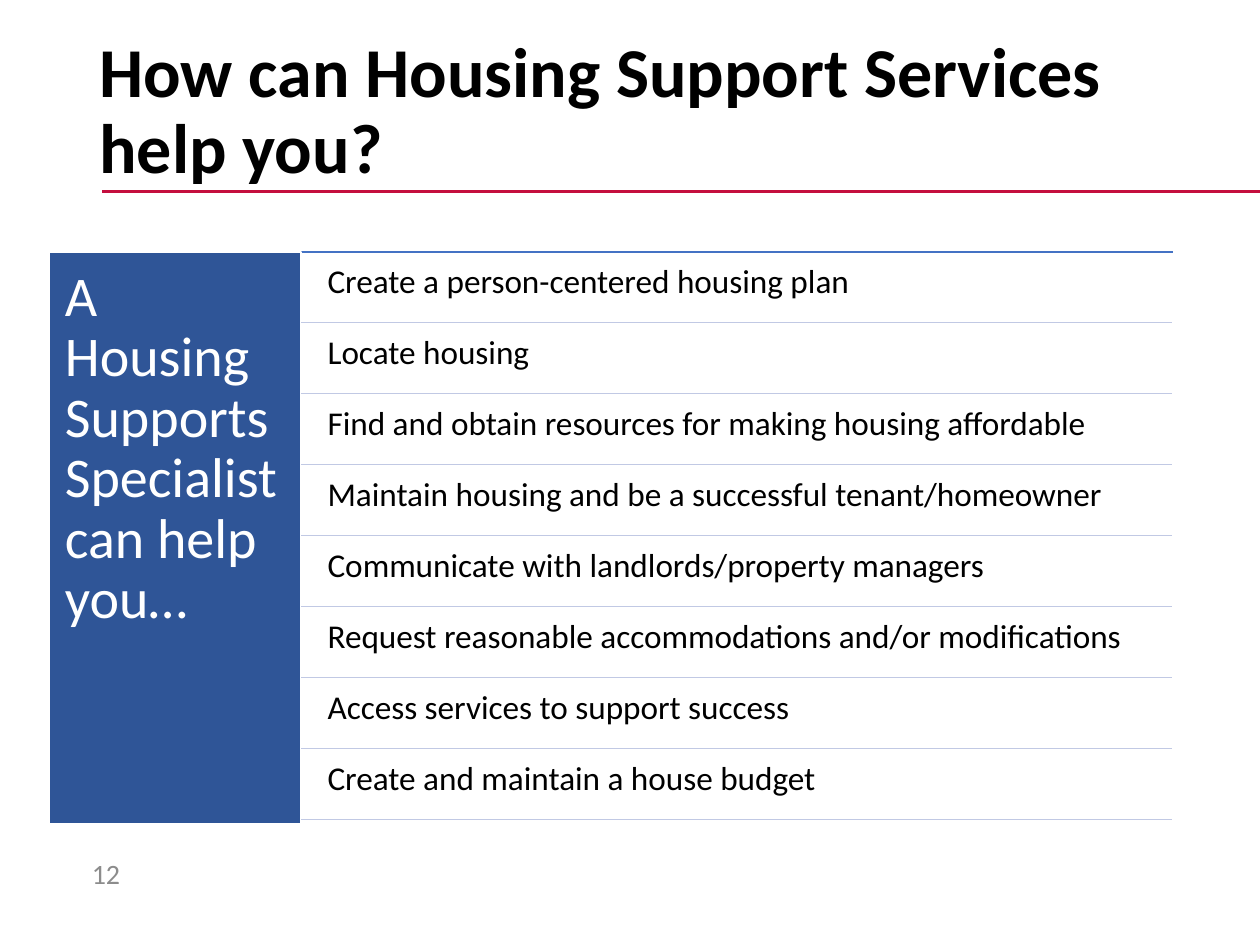
from lxml import etree
from pptx import Presentation
from pptx.dml.color import RGBColor
from pptx.enum.shapes import MSO_CONNECTOR, MSO_SHAPE
from pptx.enum.text import MSO_ANCHOR
from pptx.oxml.ns import qn
from pptx.util import Pt

BLACK = RGBColor(0x00, 0x00, 0x00)
WHITE = RGBColor(0xFF, 0xFF, 0xFF)
CRIMSON = RGBColor(0xC4, 0x0E, 0x3E)
NAVY = RGBColor(0x2F, 0x55, 0x97)
BLUE = RGBColor(0x44, 0x72, 0xC4)
PALE_BLUE = RGBColor(0xC1, 0xC9, 0xE4)
GRAY = RGBColor(0x8C, 0x8C, 0x8C)

SERVICES = [
    "Create a person-centered housing plan",
    "Locate housing",
    "Find and obtain resources for making housing affordable",
    "Maintain housing and be a successful tenant/homeowner",
    "Communicate with landlords/property managers",
    "Request reasonable accommodations and/or modifications",
    "Access services to support success",
    "Create and maintain a house budget",
]
ROW_PITCH = 40.57
PANEL = (28.08, 144, 144, 326.88)


def write_text(frame, text, *, size, color=BLACK, bold=False, spacing=0.9,
               anchor=MSO_ANCHOR.TOP, inset=None):
    frame.word_wrap = True
    frame.vertical_anchor = anchor
    if inset is not None:
        frame.margin_left = frame.margin_right = Pt(inset)
        frame.margin_top = frame.margin_bottom = Pt(inset)
    paragraph = frame.paragraphs[0]
    paragraph.line_spacing = spacing
    run = paragraph.add_run()
    run.text = text
    run.font.name = "Calibri"
    run.font.size = Pt(size)
    run.font.bold = bold
    run.font.color.rgb = color


class SlideBuilder:
    def __init__(self, slide):
        self.slide = slide

    def text(self, box, text, **style):
        label = self.slide.shapes.add_textbox(*map(Pt, box))
        write_text(label.text_frame, text, **style)

    def rule(self, left, right, y, color, width=1):
        line = self.slide.shapes.add_connector(
            MSO_CONNECTOR.STRAIGHT, Pt(left), Pt(y), Pt(right), Pt(y))
        line.line.color.rgb = color
        line.line.width = Pt(width)
        etree.SubElement(line._element.spPr, qn("a:effectLst"))

    def panel(self, box, text, **style):
        block = self.slide.shapes.add_shape(MSO_SHAPE.RECTANGLE, *map(Pt, box))
        block.shadow.inherit = False
        block.fill.solid()
        block.fill.fore_color.rgb = NAVY
        block.line.color.rgb = WHITE
        block.line.width = Pt(0.75)
        self.text(box, text, **style)


def main():
    deck = Presentation()
    deck.slide_width, deck.slide_height = Pt(720), Pt(540)
    page = SlideBuilder(deck.slides.add_slide(deck.slide_layouts[6]))

    # Heading
    page.rule(58.32, 720, 109.44, CRIMSON, 2.25)
    page.text((49.68, 12.24, 620.64, 104.4),
              "How can Housing Support Services help you?",
              size=40, bold=True, anchor=MSO_ANCHOR.MIDDLE)

    # Lead-in panel
    page.rule(28.08, 670.32, 144, BLUE)
    page.panel(PANEL, "A Housing Supports Specialist can help you…",
               size=32, color=WHITE, inset=9)

    # Services, each with a rule below
    for row, service in enumerate(SERVICES):
        offset = row * ROW_PITCH
        page.text((181.44, 145.6 + offset, 488.88, 38.88), service,
                  size=19, inset=5.76)
        page.rule(172.08, 669.6, 184.3 + offset, PALE_BLUE)

    # Page number
    page.text((45.36, 484.56, 39.6, 28.8), "12", size=16, color=GRAY,
              spacing=1, anchor=MSO_ANCHOR.MIDDLE)

    deck.save("out.pptx")


if __name__ == "__main__":
    main()
